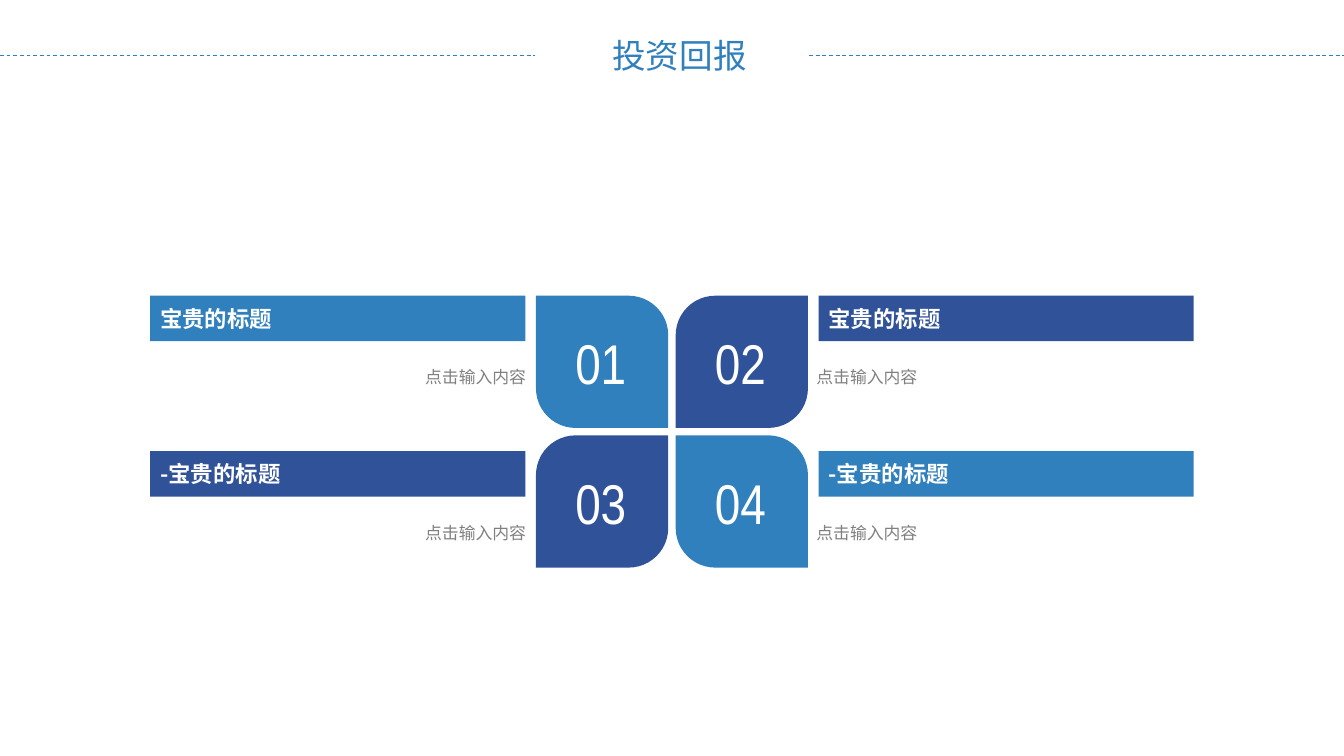
from lxml.etree import SubElement as Sub
from pptx import Presentation
from pptx.dml.color import RGBColor
from pptx.enum.dml import MSO_LINE as Dash
from pptx.enum.shapes import MSO_CONNECTOR as Link, MSO_SHAPE as Form
from pptx.enum.text import MSO_ANCHOR as Anchor, PP_ALIGN as Align
from pptx.oxml.ns import qn
from pptx.util import Cm, Pt

BLUE = RGBColor(0x30, 0x80, 0xBD)
NAVY = RGBColor(0x30, 0x52, 0x99)
GREY = RGBColor(0x80, 0x80, 0x80)
WHITE = RGBColor(0xFF, 0xFF, 0xFF)
SANS = "Noto Sans CJK SC"
SLIM = "Arial Narrow"
WIDE, HIGH = 25.4, 14.29
PETAL, STEP = 2.5, 2.64
BAR_W, BAR_H, BAR_STEP = 7.09, 0.86, 2.94
NOTE_W, NOTE_H = 8.86, 0.96


def write(shape, text, size, color, font=SANS, align=Align.LEFT,
          bold=False, anchor=Anchor.TOP, wrap=True):
    frame = shape.text_frame
    frame.text = text
    frame.word_wrap = wrap
    frame.vertical_anchor = anchor
    frame.margin_left = frame.margin_right = Cm(0.19)
    frame.margin_top = frame.margin_bottom = Cm(0.1)
    para = frame.paragraphs[0]
    para.alignment = align
    run = para.runs[0]
    run.font.size = Pt(size)
    run.font.bold = bold
    run.font.name = font
    run.font.color.rgb = color
    Sub(run.font._element, qn("a:ea")).set("typeface", font)
    return para


def add_form(slide, form, x, y, w, h, color):
    shape = slide.shapes.add_shape(form, Cm(x), Cm(y), Cm(w), Cm(h))
    shape.shadow.inherit = False
    shape.fill.solid()
    shape.fill.fore_color.rgb = color
    shape.line.fill.background()
    return shape


def add_text(slide, x, y, w, h, *args, **style):
    box = slide.shapes.add_textbox(Cm(x), Cm(y), Cm(w), Cm(h))
    return write(box, *args, **style)


def add_head(slide, x, y, w, text):
    title = slide.shapes.title
    title.left, title.top = Cm(x + 11.38), Cm(y - 0.48)
    title.width, title.height = Cm(2.95), Cm(0.97)
    write(title, text, 18, BLUE, wrap=False)
    rule = 10.11
    for left in (x, x + w - rule):
        line = slide.shapes.add_connector(
            Link.STRAIGHT, Cm(left), Cm(y), Cm(left + rule), Cm(y))
        line.line.color.rgb = BLUE
        line.line.width = Pt(0.5)
        line.line.dash_style = Dash.DASH
        Sub(line._element.spPr, qn("a:effectLst"))


def add_petal(slide, x, y, text, color, main):
    petal = add_form(slide, Form.ROUND_2_DIAG_RECTANGLE,
                     x, y, PETAL, PETAL, color)
    petal.adjustments[0] = 0.3 if main else 0
    petal.adjustments[1] = 0 if main else 0.3
    add_text(slide, x + 0.35, y + 0.52, 1.75, 1.47, text, 30, WHITE,
             font=SLIM, align=Align.CENTER)


def add_entry(slide, x, y, head, note, color, right):
    bar = add_form(slide, Form.RECTANGLE, x, y, BAR_W, BAR_H, color)
    write(bar, head, 12, WHITE, align=Align.JUSTIFY, bold=True,
          anchor=Anchor.MIDDLE)
    left = x - 0.23 if right else x + BAR_W + 0.2 - NOTE_W
    para = add_text(slide, left, y + BAR_H, NOTE_W, NOTE_H, note, 9, GREY,
                    align=Align.LEFT if right else Align.RIGHT)
    para.line_spacing = 2.0


def add_bloom(slide, x, y, items):
    for i, (head, note) in enumerate(items):
        row, col = divmod(i, 2)
        color = BLUE if row == col else NAVY
        add_petal(slide, x + 7.29 + col * STEP, y + row * STEP,
                  f"{i + 1:02}", color, row != col)
        add_entry(slide, x + col * 12.63, y + row * BAR_STEP,
                  head, note, color, col == 1)


def main():
    deck = Presentation()
    deck.slide_width, deck.slide_height = Cm(WIDE), Cm(HIGH)
    slide = deck.slides.add_slide(deck.slide_layouts[5])
    add_head(slide, 0, 1.04, WIDE, "投资回报")
    note = "点击输入内容"
    heads = ["宝贵的标题"] * 2 + ["-宝贵的标题"] * 2
    add_bloom(slide, 2.84, 5.59, [(head, note) for head in heads])
    deck.save("out.pptx")


if __name__ == "__main__":
    main()
